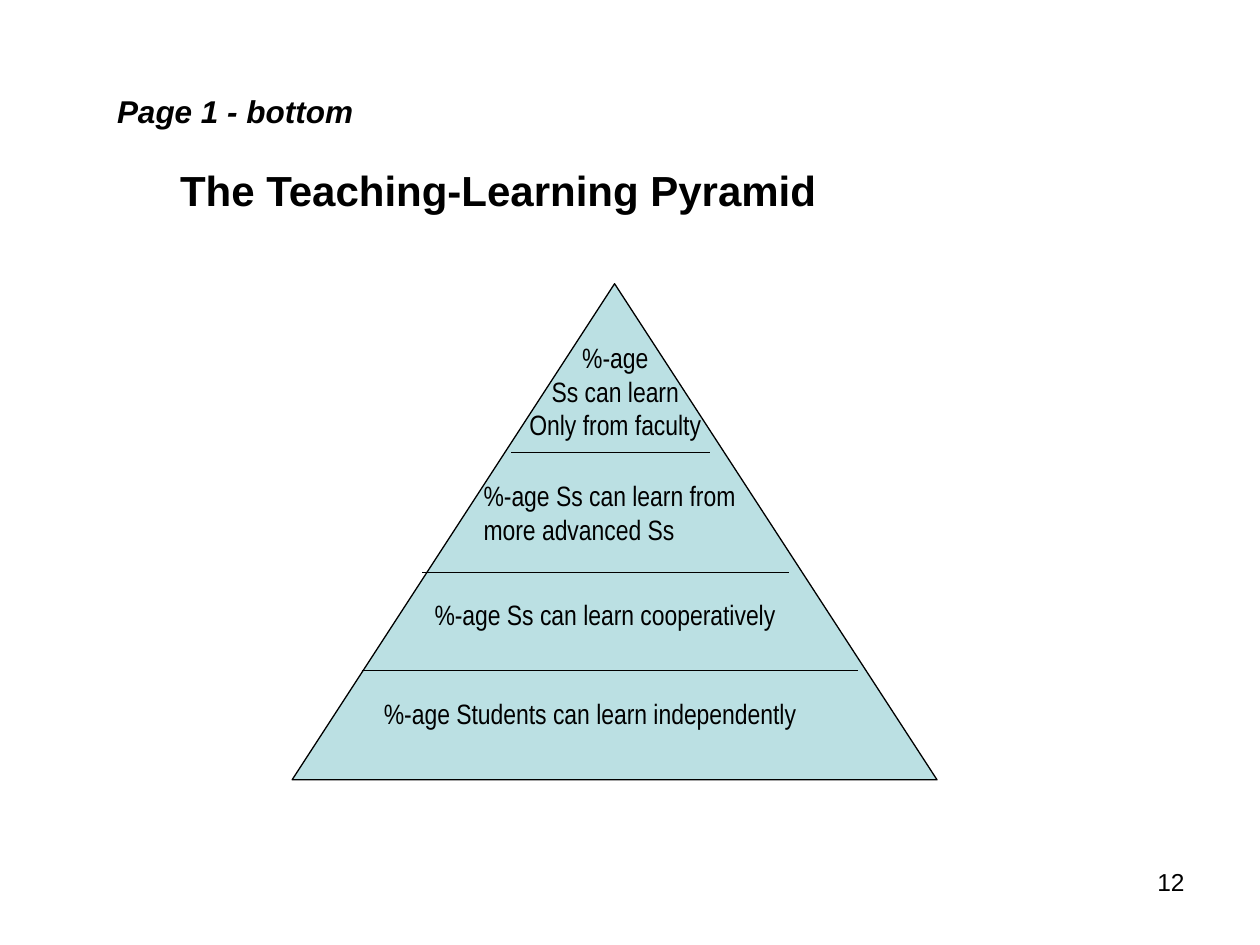
from lxml import etree
from pptx import Presentation
from pptx.dml.color import RGBColor
from pptx.enum.shapes import MSO_CONNECTOR, MSO_SHAPE
from pptx.enum.text import PP_ALIGN
from pptx.oxml.ns import qn
from pptx.util import Cm, Pt

BLACK = RGBColor(0x00, 0x00, 0x00)
PALE_TEAL = RGBColor(0xBB, 0xE0, 0xE3)


def add_text_frame(s, left, top, width, height):
    tf = s.shapes.add_textbox(Cm(left), Cm(top), Cm(width), Cm(height)).text_frame
    tf.word_wrap = True
    return tf


def add_run(p, text, size, font="Arial", bold=False, italic=False):
    r = p.add_run()
    r.text = text
    r.font.name = font
    r.font.size = Pt(size)
    r.font.bold = bold
    r.font.italic = italic
    r.font.color.rgb = BLACK


def add_heading(s, left, top, width, height):
    tf = add_text_frame(s, left, top, width, height)
    add_run(tf.paragraphs[0], "Page 1 - bottom", 18, bold=True, italic=True)
    p = tf.add_paragraph()
    p.space_before = Pt(20)
    p._p.get_or_add_pPr().set("marL", str(Cm(1.27)))
    add_run(p, "The Teaching-Learning Pyramid", 24, bold=True)


def add_divider(s, left, top, width):
    line = s.shapes.add_connector(
        MSO_CONNECTOR.STRAIGHT, Cm(left), Cm(top), Cm(left + width), Cm(top))
    line.line.color.rgb = BLACK
    line.line.width = Pt(0.75)
    etree.SubElement(line._element.spPr, qn("a:effectLst"))


def add_pyramid(s, left, top, width, height):
    sp = s.shapes.add_shape(
        MSO_SHAPE.ISOSCELES_TRIANGLE, Cm(left), Cm(top), Cm(width), Cm(height))
    sp.shadow.inherit = False
    sp.fill.solid()
    sp.fill.fore_color.rgb = PALE_TEAL
    sp.line.color.rgb = BLACK
    sp.line.width = Pt(0.75)

    for x, y, w in [(4.42, 3.4, 4), (2.62, 5.82, 7.4), (1.4, 7.8, 10)]:
        add_divider(s, left + x, top + y, w)

    levels = [
        (3.81, 1.02, 5.41, 2.31, PP_ALIGN.CENTER,
         ["%-age", "Ss can learn", "Only from faculty"]),
        (3.61, 3.81, 5.59, 1.63, PP_ALIGN.LEFT,
         ["%-age Ss can learn from more advanced Ss"]),
        (2.62, 6.2, 7.6, 0.94, PP_ALIGN.LEFT, ["%-age Ss can learn cooperatively"]),
        (1.6, 8.2, 9.6, 0.94, PP_ALIGN.LEFT, ["%-age Students can learn independently"]),
    ]
    for x, y, w, h, align, lines in levels:
        tf = add_text_frame(s, left + x, top + y, w, h)
        for i, text in enumerate(lines):
            p = tf.add_paragraph() if i else tf.paragraphs[0]
            p.alignment = align
            add_run(p, text, 16, "Arial Narrow")


def add_page_number(s, left, top, width, height):
    p = add_text_frame(s, left, top, width, height).paragraphs[0]
    p.alignment = PP_ALIGN.RIGHT
    add_run(p, "12", 14)


def main():
    prs = Presentation()
    prs.slide_width, prs.slide_height = Cm(25.4), Cm(19.05)
    s = prs.slides.add_slide(prs.slide_layouts[6])
    add_heading(s, 2.11, 1.73, 20.47, 3.4)
    add_pyramid(s, 5.89, 5.72, 13, 10)
    add_page_number(s, 18.21, 17.35, 5.92, 1.32)
    prs.save("out.pptx")


if __name__ == "__main__":
    main()
